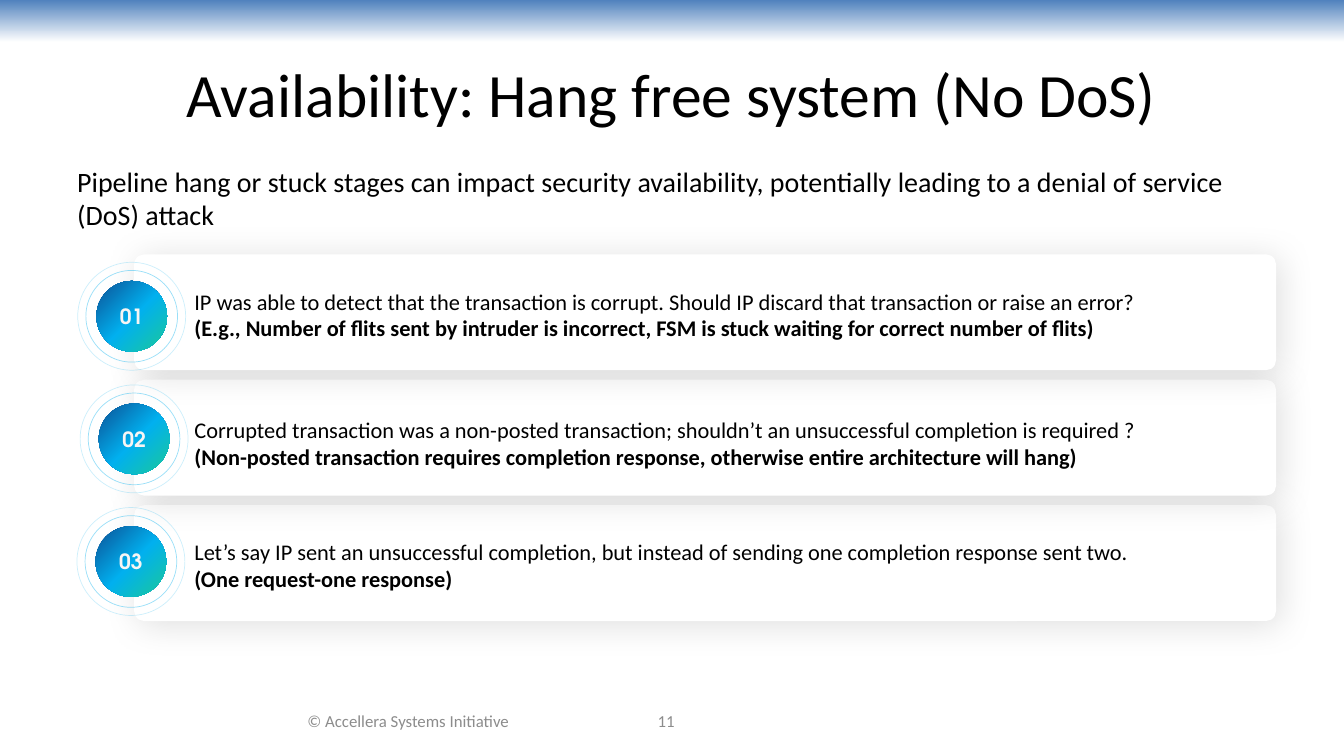
from pptx import Presentation
from pptx.dml.color import RGBColor
from pptx.enum.shapes import MSO_SHAPE
from pptx.enum.text import MSO_ANCHOR, PP_ALIGN
from pptx.oxml import parse_xml
from pptx.oxml.ns import nsdecls, qn
from pptx.util import Cm, Pt

CONCERNS = [
    ("IP was able to detect that the transaction is corrupt. Should IP discard that transaction or raise an error?",
     "(E.g., Number of flits sent by intruder is incorrect, FSM is stuck waiting for correct number of flits)", 0),
    ("Corrupted transaction was a non-posted transaction; shouldn’t an unsuccessful completion is required ?",
     "(Non-posted transaction requires completion response, otherwise entire architecture will hang)", 53.5),
    ("Let’s say IP sent an unsuccessful completion, but instead of sending one completion response sent two.",
     "(One request-one response)", 48.5),
]
BADGE_CENTRES = [3.32, 3.38, 3.3]
BADGE_TOP, BADGE_PITCH = 7.97, 3.09
CARD_TOP, CARD_PITCH = 6.41, 3.16
DISC_STOPS = [(0, "1BC99A"), (48, "01B0EF"), (100, "0C5195")]
TOWARDS_CORNER = '<a:path path="circle"><a:fillToRect l="100000" t="100000"/></a:path>'
DOWNWARDS = '<a:lin ang="5400000" scaled="0"/>'


def colour(code):
    return RGBColor.from_string(code)


def style(paragraph, size, code="000000", bold=False, font="Calibri"):
    for run in paragraph.runs:
        run.font.name = font
        run.font.size = Pt(size)
        run.font.bold = bold
        run.font.color.rgb = colour(code)


def place(holder, left, top, width, height):
    holder.left, holder.top = Cm(left), Cm(top)
    holder.width, holder.height = Cm(width), Cm(height)


def add_plain(shapes, kind, left, top, width, height):
    plain = shapes.add_shape(kind, Cm(left), Cm(top), Cm(width), Cm(height))
    plain.line.fill.background()
    plain.shadow.inherit = False
    return plain


def fill_gradient(target, stops, direction):
    target.fill.gradient()
    marks = "".join(f'<a:gs pos="{pos * 1000}"><a:srgbClr val="{code}"/></a:gs>' for pos, code in stops)
    blend = parse_xml(f'<a:gradFill {nsdecls("a")} rotWithShape="1"><a:gsLst>{marks}</a:gsLst>'
                      f'{direction}</a:gradFill>')
    properties = target.element.spPr
    properties.replace(properties.find(qn("a:gradFill")), blend)


def add_card(slide, top):
    card = add_plain(slide.shapes, MSO_SHAPE.ROUNDED_RECTANGLE, 3.38, top, 28.78, 2.92)
    card.adjustments[0] = 0.087
    card.fill.solid()
    card.fill.fore_color.rgb = colour("FFFFFF")
    card.element.spPr.find(qn("a:effectLst")).append(parse_xml(
        f'<a:outerShdw {nsdecls("a")} blurRad="{Pt(24.9)}" dist="{Pt(3)}" dir="2700000" algn="tl" '
        'rotWithShape="0"><a:srgbClr val="000000"><a:alpha val="13000"/></a:srgbClr></a:outerShdw>'))


def add_circle(shapes, centre_x, centre_y, diameter):
    return add_plain(shapes, MSO_SHAPE.OVAL, centre_x - diameter / 2, centre_y - diameter / 2,
                     diameter, diameter)


def add_badge(slide, number, centre_x, centre_y):
    disc = add_circle(slide.shapes, centre_x, centre_y, 1.78)
    fill_gradient(disc, DISC_STOPS, TOWARDS_CORNER)
    label = disc.text_frame
    label.margin_left = label.margin_right = Cm(0.13)
    label.margin_top = label.margin_bottom = 0
    label.vertical_anchor = MSO_ANCHOR.MIDDLE
    label.word_wrap = False
    label.text = f"{number:02d}"
    label.paragraphs[0].alignment = PP_ALIGN.CENTER
    style(label.paragraphs[0], 15, "F7F5F4", True, "TeX Gyre Adventor")

    rings = slide.shapes.add_group_shape()
    for diameter, opacity in ((2.72, 20), (2.31, 40)):
        ring = add_circle(rings.shapes, centre_x, centre_y, diameter)
        ring.fill.background()
        ring.line.width = Pt(0.5)
        ring.line.color.rgb = colour("01B0EF")
        ring.element.spPr.find(".//" + qn("a:srgbClr")).append(
            parse_xml(f'<a:alpha {nsdecls("a")} val="{opacity * 1000}"/>'))


def add_footer(slide, text, left, width):
    footer = slide.shapes.add_textbox(Cm(left), Cm(17.65), Cm(width), Cm(1.02)).text_frame
    footer.word_wrap = True
    footer.vertical_anchor = MSO_ANCHOR.MIDDLE
    footer.text = text
    footer.paragraphs[0].alignment = PP_ALIGN.CENTER
    style(footer.paragraphs[0], 12, "8C8C8C")


def add_concerns(slide):
    concerns = slide.shapes.add_textbox(Cm(4.65), Cm(6.78), Cm(26.87), Cm(8.28)).text_frame
    concerns.word_wrap = True
    concerns.margin_top = Cm(0.47)
    concerns.text = "\n".join(line for question, detail, _ in CONCERNS for line in (question, detail))
    lines = concerns.paragraphs
    for question, detail, (_, _, gap) in zip(lines[::2], lines[1::2], CONCERNS):
        if gap:
            question.space_before = Pt(gap)
        style(question, 16)
        style(detail, 16, bold=True)


def fill_placeholders(slide):
    title, body = slide.placeholders
    place(title, 1.69, 0.76, 30.48, 3.18)
    title.text_frame.text = "Availability: Hang free system (No DoS)"
    title.text_frame.vertical_anchor = MSO_ANCHOR.MIDDLE
    title.text_frame.paragraphs[0].alignment = PP_ALIGN.CENTER
    style(title.text_frame.paragraphs[0], 44)

    place(body, 1.69, 4.01, 30.48, 12.5)
    body.text_frame.text = ("Pipeline hang or stuck stages can impact security availability, "
                            "potentially leading to a denial of service (DoS) attack")
    intro = body.text_frame.paragraphs[0]
    settings = intro._p.get_or_add_pPr()
    settings.set("marL", "0")
    settings.set("indent", "0")
    settings.append(parse_xml(f'<a:buNone {nsdecls("a")}/>'))
    intro.space_before = Pt(0)
    style(intro, 20)


def main():
    deck = Presentation()
    deck.slide_width, deck.slide_height = Cm(33.87), Cm(19.05)
    slide = deck.slides.add_slide(deck.slide_layouts[1])
    band = add_plain(slide.shapes, MSO_SHAPE.RECTANGLE, 0, 0, 33.87, 1.06)
    fill_gradient(band, [(0, "4F81BD"), (100, "FFFFFF")], DOWNWARDS)
    for row in reversed(range(len(CONCERNS))):
        add_card(slide, CARD_TOP + row * CARD_PITCH)
    fill_placeholders(slide)
    add_footer(slide, "© Accellera Systems Initiative", 6.2, 8.18)
    add_footer(slide, "11", 13.54, 6.5)
    add_concerns(slide)
    for row, centre in enumerate(BADGE_CENTRES):
        add_badge(slide, row + 1, centre, BADGE_TOP + row * BADGE_PITCH)
    deck.save("out.pptx")


if __name__ == "__main__":
    main()
